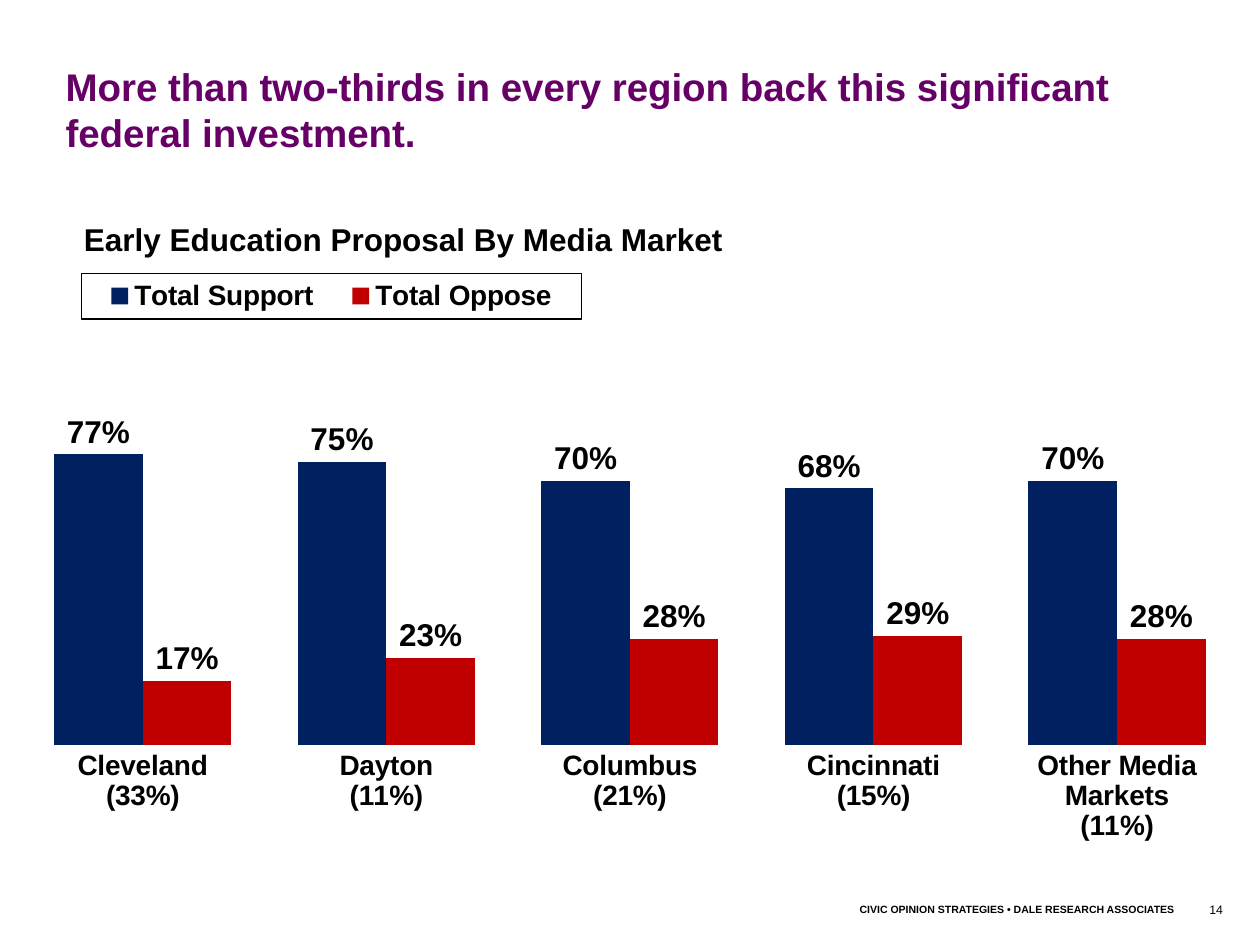
from dataclasses import dataclass

from lxml.etree import fromstring
from pptx import Presentation
from pptx.chart.data import CategoryChartData
from pptx.dml.color import RGBColor
from pptx.enum.chart import XL_CHART_TYPE, XL_LABEL_POSITION, XL_LEGEND_POSITION, XL_TICK_MARK
from pptx.enum.text import MSO_AUTO_SIZE, PP_ALIGN
from pptx.oxml import parse_xml
from pptx.oxml.ns import nsdecls, qn
from pptx.util import Inches, Pt


@dataclass(frozen=True)
class Theme:
    font: str = "Arial"
    text: str = "000000"
    title: str = "660066"
    support: str = "002060"
    oppose: str = "C00000"
    title_size: int = 22
    heading_size: int = 18
    axis_size: int = 16
    footer_size: int = 6
    number_size: int = 7


class SlideBuilder:
    COLUMNS, ROWS = 120, 90

    def __init__(self, deck, theme):
        self.theme = theme
        self.slide = deck.slides.add_slide(deck.slide_layouts[6])
        self.column = deck.slide_width / self.COLUMNS
        self.row = deck.slide_height / self.ROWS

    def place(self, left, top, width, height):
        return (round(left * self.column), round(top * self.row),
                round(width * self.column), round(height * self.row))

    def style(self, font, size, color=None, bold=True):
        font.name = self.theme.font
        font.size = Pt(size)
        font.bold = bold
        font.color.rgb = RGBColor.from_string(color or self.theme.text)

    def text(self, words, area, size, color=None, bold=True, align=PP_ALIGN.LEFT, inset=True):
        frame = self.slide.shapes.add_textbox(*self.place(*area)).text_frame
        frame.word_wrap = True
        frame.auto_size = MSO_AUTO_SIZE.SHAPE_TO_FIT_TEXT
        if not inset:
            frame.margin_left = frame.margin_top = frame.margin_right = frame.margin_bottom = 0
        paragraph = frame.paragraphs[0]
        paragraph.text = words
        paragraph.alignment = align
        self.style(paragraph.font, size, color, bold)

    def layout(self, parent, index, shares, inner=False):
        for old in parent.findall(qn("c:layout")):
            parent.remove(old)
        target = '<c:layoutTarget val="inner"/>' if inner else ""
        modes = "".join(f'<c:{side}Mode val="edge"/>' for side in "xy")
        sizes = "".join(f'<c:{side} val="{share}"/>' for side, share in zip("xywh", shares))
        parent.insert(index, parse_xml(
            f'<c:layout {nsdecls("c")}><c:manualLayout>{target}{modes}{sizes}'
            '</c:manualLayout></c:layout>'))

    def columns(self, categories, series, area, plot_shares, legend_shares):
        data = CategoryChartData(number_format="0%")
        data.categories = categories
        for name, values, _ in series:
            data.add_series(name, values)
        chart = self.slide.shapes.add_chart(
            XL_CHART_TYPE.COLUMN_CLUSTERED, *self.place(*area), data).chart
        self.style(chart.font, self.theme.heading_size, bold=False)
        chart.has_title = False

        plot = chart.plots[0]
        plot.gap_width = 75
        plot.overlap = 0
        plot.vary_by_categories = False
        for bars, (_, _, color) in zip(plot.series, series):
            bars.format.fill.solid()
            bars.format.fill.fore_color.rgb = RGBColor.from_string(color)
            labels = bars.data_labels
            labels.show_value = True
            labels.position = XL_LABEL_POSITION.OUTSIDE_END
            labels.number_format = "0%"
            labels.number_format_is_linked = False
            self.style(labels.font, self.theme.heading_size)

        markets = chart.category_axis
        markets.major_tick_mark = markets.minor_tick_mark = XL_TICK_MARK.NONE
        markets.format.line.fill.background()
        self.style(markets.tick_labels.font, self.theme.axis_size)
        shares = chart.value_axis
        shares.minimum_scale, shares.maximum_scale, shares.major_unit = 0, 1, 0.2
        shares.has_major_gridlines = False
        shares.visible = False
        self.layout(chart._chartSpace.chart.plotArea, 0, plot_shares, inner=True)
        self.legend(chart, legend_shares)

    def legend(self, chart, shares):
        chart.has_legend = True
        legend = chart.legend
        legend.position = XL_LEGEND_POSITION.BOTTOM
        legend.include_in_layout = False
        self.style(legend.font, self.theme.axis_size)
        element = chart._chartSpace.chart.find(qn("c:legend"))
        self.layout(element, 1, shares)
        element.find(qn("c:txPr")).addprevious(fromstring(
            f'<c:spPr {nsdecls("c", "a")}><a:ln w="9525"><a:solidFill>'
            f'<a:srgbClr val="{self.theme.text}"/></a:solidFill></a:ln></c:spPr>'))


def main():
    deck = Presentation()
    deck.slide_width, deck.slide_height = Inches(10), Inches(7.5)
    theme = Theme()
    page = SlideBuilder(deck, theme)
    page.columns(
        ["Cleveland\n(33%)", "Dayton\n(11%)", "Columbus\n(21%)", "Cincinnati\n(15%)",
         "Other Media Markets\n(11%)"],
        [("Total Support", (0.77, 0.75, 0.70, 0.68, 0.70), theme.support),
         ("Total Oppose", (0.17, 0.23, 0.28, 0.29, 0.28), theme.oppose)],
        area=(2, 22, 116, 62),
        plot_shares=(0, 0.21, 1, 0.58),
        legend_shares=(0.05, 0.065, 0.41, 0.07))
    page.text("Early Education Proposal By Media Market", (8, 21, 63, 3.6),
              theme.heading_size, inset=False)
    page.text("CIVIC OPINION STRATEGIES • DALE RESEARCH ASSOCIATES", (71, 85.4, 42, 2.4),
              theme.footer_size, align=PP_ALIGN.RIGHT)
    page.text("14", (114, 85.3, 6, 2.6), theme.number_size, bold=False)
    page.text("More than two-thirds in every region back this significant federal investment.",
              (6.25, 6, 107.75, 8.9), theme.title_size, theme.title, inset=False)
    deck.save("out.pptx")


if __name__ == "__main__":
    main()
